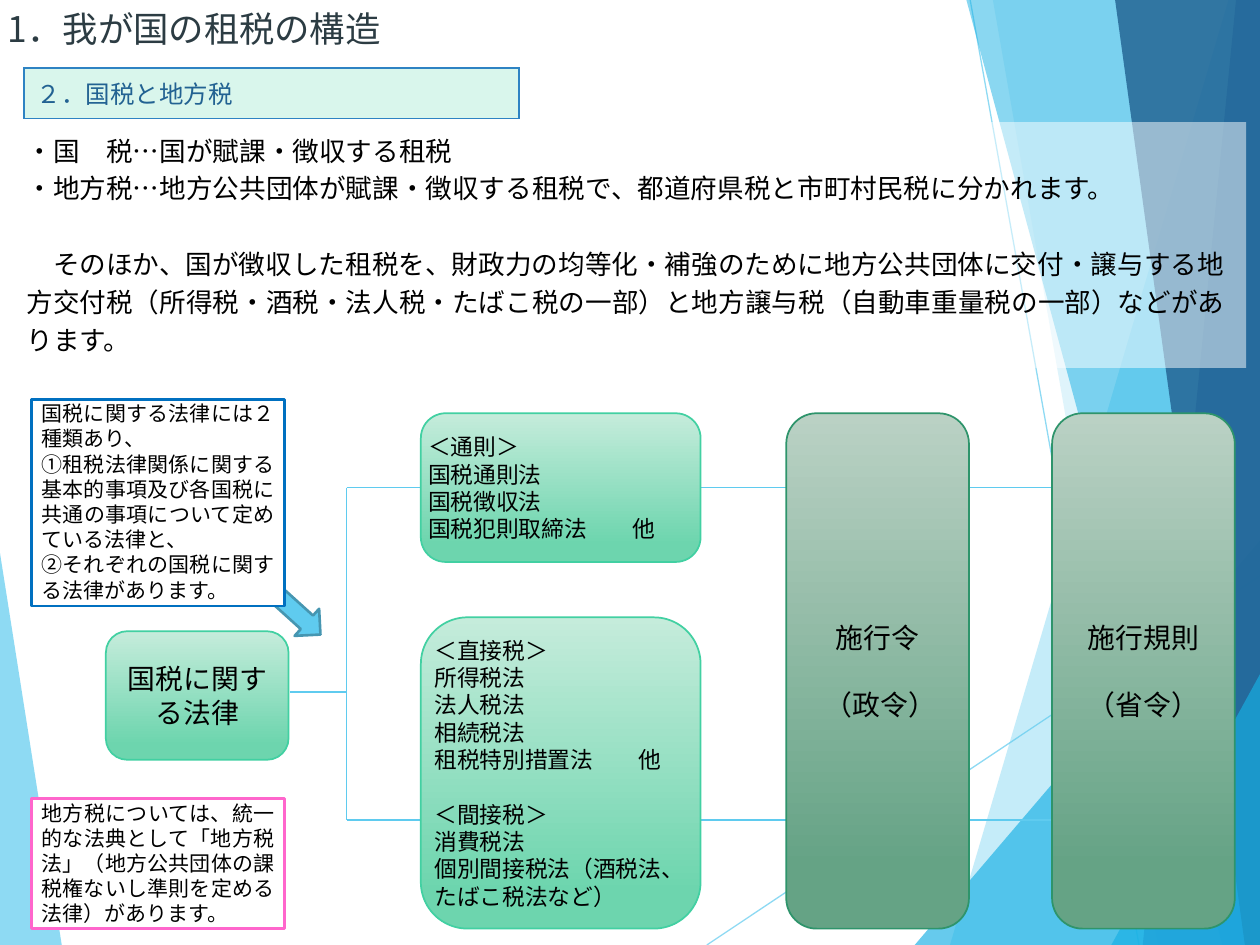
from dataclasses import dataclass

from lxml import etree
from pptx import Presentation
from pptx.dml.color import RGBColor
from pptx.enum.shapes import MSO_CONNECTOR, MSO_SHAPE
from pptx.enum.text import MSO_ANCHOR, MSO_AUTO_SIZE, PP_ALIGN
from pptx.oxml.ns import qn
from pptx.util import Inches, Pt

STRAIGHT = MSO_CONNECTOR.STRAIGHT
RECTANGLE, ROUNDED, RIGHT_ARROW = MSO_SHAPE.RECTANGLE, MSO_SHAPE.ROUNDED_RECTANGLE, MSO_SHAPE.RIGHT_ARROW
TOP, MIDDLE = MSO_ANCHOR.TOP, MSO_ANCHOR.MIDDLE
LEFT, CENTER, JUSTIFY = PP_ALIGN.LEFT, PP_ALIGN.CENTER, PP_ALIGN.JUSTIFY
NO_AUTOSIZE = MSO_AUTO_SIZE.NONE


@dataclass(frozen=True)
class Theme:
    """Colours, type sizes and font of the deck."""
    font: str = "Noto Sans CJK JP"
    title_size: float = 20.2
    node_size: float = 15.9
    body_size: float = 15.2
    label_size: float = 14
    list_size: float = 13
    note_size: float = 12
    ink: str = "000000"
    paper: str = "FFFFFF"
    title: str = "2C3C43"
    navy: str = "226292"
    blue: str = "2E83C3"
    azure: str = "17B0E4"
    sky: str = "5FCBEF"
    arrow_edge: str = "4696B1"
    label_fill: str = "D9F6EC"
    law: tuple = ("C5ECDB", "6DD5AE", "42D0A2")
    decree: tuple = ("BAD1C4", "65A385", "2E946B")
    national: str = "0070C0"
    local: str = "FF66CC"


@dataclass(frozen=True)
class Box:
    """A rectangle measured in inches."""
    left: float
    top: float
    width: float
    height: float

    def inner(self, left, top, width, height):
        """Return a box placed relative to this one."""
        return Box(self.left + left, self.top + top, width, height)

    def lengths(self):
        """Return left, top, width and height as lengths."""
        return [Inches(side) for side in (self.left, self.top, self.width, self.height)]


THEME = Theme()


def rgb(value):
    """Turn a hex string into a colour."""
    return RGBColor.from_string(value)


def set_opacity(shape, percent):
    """Make every colour of a shape partly transparent."""
    for color in shape.element.spPr.iter(qn("a:srgbClr")):
        etree.SubElement(color, qn("a:alpha"), val=str(percent * 1000))


def write(frame, lines, size, color=THEME.ink, align=LEFT, anchor=MIDDLE, insets=(0, 0.05)):
    """Fill a text frame with formatted paragraphs."""
    frame.text = "\n".join(lines)
    frame.word_wrap = True
    frame.auto_size = NO_AUTOSIZE
    frame.vertical_anchor = anchor
    frame.margin_left = frame.margin_right = Inches(insets[0])
    frame.margin_top = frame.margin_bottom = Inches(insets[1])
    for para in frame.paragraphs:
        para.alignment = align
        style(para, size, color)


def style(para, size, color):
    """Set size, colour and both script fonts on the runs of a paragraph."""
    for span in para.runs:
        span.font.size = Pt(size)
        span.font.color.rgb = rgb(color)
        span.font.name = THEME.font
        etree.SubElement(span.font._element, qn("a:ea"), typeface=THEME.font)


def add_block(page, kind, box, fill, edge, width):
    """Add a flat shape with a solid fill and an outline."""
    block = page.shapes.add_shape(kind, *box.lengths())
    block.shadow.inherit = False
    block.fill.solid()
    block.fill.fore_color.rgb = rgb(fill)
    block.line.color.rgb = rgb(edge)
    block.line.width = Pt(width)
    return block


def add_line(page, box, start, end, width=1):
    """Add a sky-blue connector between two points of a box."""
    points = [Inches(value) for x, y in (start, end) for value in (box.left + x, box.top + y)]
    line = page.shapes.add_connector(STRAIGHT, *points)
    line.line.color.rgb = rgb(THEME.sky)
    line.line.width = Pt(width)
    etree.SubElement(line.element.spPr, qn("a:effectLst"))
    return line


def add_facet(page, box, points, color, opacity):
    """Add one translucent polygon of the backdrop."""
    corners = [(Inches(box.left + x), Inches(box.top + y)) for x, y in points]
    builder = page.shapes.build_freeform(*corners[0])
    builder.add_line_segments(corners[1:])
    facet = builder.convert_to_shape()
    facet.shadow.inherit = False
    facet.fill.solid()
    facet.fill.fore_color.rgb = rgb(color)
    facet.line.fill.background()
    set_opacity(facet, opacity)


def add_backdrop(page, box):
    """Draw the facets and thin rays behind the content."""
    right, bottom = box.width, box.height
    add_facet(page, box, [(0, 4.39), (0.49, bottom), (0, bottom)], THEME.sky, 70)
    for start, end in (((5.61, bottom), (right, 4.57)), ((7.7, 0), (9.04, bottom))):
        set_opacity(add_line(page, box, start, end, 0.75), 70)
    facets = [
        (9.75, 0, 7.54, THEME.sky, 36),
        (7.88, 0, 9.19, THEME.sky, 20),
        (right, 4.29, 7.26, THEME.azure, 66),
        (7.67, 0, 9.7, THEME.azure, 50),
        (9.81, 0, 9.07, THEME.blue, 70),
        (8.85, 0, 9.88, THEME.navy, 82),
        (right, 5.35, 8.82, THEME.azure, 66),
    ]
    for upper, top, lower, color, opacity in facets:
        points = [(upper, top), (lower, bottom), (right, bottom), (right, top)]
        add_facet(page, box, points, color, opacity)


def place(holder, box):
    """Move a placeholder into a box and in front of earlier shapes."""
    holder.left, holder.top, holder.width, holder.height = box.lengths()
    holder.element.getparent().append(holder.element)


def add_title(page, box):
    """Set the slide title."""
    title = page.shapes.title
    place(title, box)
    write(title.text_frame, [" 1．我が国の租税の構造"], THEME.title_size, THEME.title, insets=(0, 0))


def add_explanation(page, box):
    """Set the body text on its translucent panel."""
    body = page.placeholders[1]
    place(body, box)
    body.fill.solid()
    body.fill.fore_color.rgb = rgb(THEME.paper)
    set_opacity(body, 50)
    write(body.text_frame, [
        "・国　税…国が賦課・徴収する租税",
        "・地方税…地方公共団体が賦課・徴収する租税で、都道府県税と市町村民税に分かれます。",
        "　そのほか、国が徴収した租税を、財政力の均等化・補強のために地方公共団体に交付・譲与する地方交付税（所得税・酒税・法人税・たばこ税の一部）と地方譲与税（自動車重量税の一部）などがあります。",
    ], THEME.body_size, anchor=TOP, insets=(0.1, 0.05))
    for para in body.text_frame.paragraphs:
        para.line_spacing = Pt(21.6)
        para.space_before = Pt(0)
        properties = para._p.get_or_add_pPr()
        properties.set("marL", "0")
        properties.set("indent", "0")
        etree.SubElement(properties, qn("a:buNone"))
    para.space_before = Pt(21.6)


def add_section_label(page, box):
    """Add the one-cell table that names the section."""
    table = page.shapes.add_table(1, 1, *box.lengths()).table
    cell = table.cell(0, 0)
    cell.text = "２．国税と地方税"
    cell.vertical_anchor = MIDDLE
    cell.fill.solid()
    cell.fill.fore_color.rgb = rgb(THEME.label_fill)
    para = cell.text_frame.paragraphs[0]
    style(para, THEME.label_size, THEME.navy)
    para.runs[0].font.bold = False
    properties = cell._tc.get_or_add_tcPr()
    for index, side in enumerate(("a:lnL", "a:lnR", "a:lnT", "a:lnB")):
        border = etree.Element(qn(side), w=str(Pt(1)))
        fill = etree.SubElement(border, qn("a:solidFill"))
        etree.SubElement(fill, qn("a:srgbClr"), val=THEME.blue)
        properties.insert(index, border)


def add_node(page, box, lines, colors, size, align=LEFT, side_inset=0, gap_before=None, gap=0):
    """Add a rounded gradient node, with a gap before one paragraph."""
    node = add_block(page, ROUNDED, box, colors[0], colors[2], 1)
    node.fill.gradient()
    node.fill.gradient_angle = 270
    for stop, color, position in zip(node.fill.gradient_stops, colors, (0, 0.88)):
        stop.color.rgb = rgb(color)
        stop.position = position
    write(node.text_frame, lines, size, align=align, insets=(side_inset, 0.05))
    if gap_before is not None:
        node.text_frame.paragraphs[gap_before].space_before = Pt(gap)


def add_law_diagram(page, box):
    """Draw the tree from tax laws to orders and regulations."""
    trunk, upper, lower, regulation = 1.91, 0.59, 3.23, 7.51
    add_line(page, box, (1.46, 2.21), (trunk, 2.21))
    add_line(page, box, (trunk, upper), (trunk, lower))
    for level in (upper, lower):
        add_line(page, box, (trunk, level), (regulation, level))
    for left, lines in ((regulation, ["施行規則", "（省令）"]), (5.4, ["施行令", " （政令）"])):
        add_node(page, box.inner(left, 0, 1.45, box.height), lines, THEME.decree,
                 THEME.node_size, CENTER, gap_before=1, gap=19)
    add_node(page, box.inner(2.5, 0, 2.22, 1.18),
             ["＜通則＞", "国税通則法", "国税徴収法", "国税犯則取締法　　他"], THEME.law, THEME.list_size)
    add_node(page, box.inner(0, 1.73, 1.45, 1.02), ["国税に関する法律"], THEME.law,
             THEME.node_size, CENTER, side_inset=0.1)
    add_node(page, box.inner(2.5, 1.62, 2.22, 2.47), [
        "＜直接税＞", "所得税法", "法人税法", "相続税法", "租税特別措置法　　他",
        "＜間接税＞", "消費税法", "個別間接税法（酒税法、たばこ税法など）",
    ], THEME.law, THEME.list_size, gap_before=5, gap=15.6)


def add_note(page, box, lines, edge):
    """Add a white note with a coloured outline."""
    note = add_block(page, RECTANGLE, box, THEME.paper, edge, 1.5)
    write(note.text_frame, lines, THEME.note_size, align=JUSTIFY, anchor=TOP, insets=(0.08, 0.01))


def add_notes(page, box):
    """Add the two side notes and the arrow between them."""
    add_note(page, box.inner(0, 3.17, box.width, 1.03),
             ["地方税については、統一的な法典として「地方税法」（地方公共団体の課税権ないし準則を定める法律）があります。"],
             THEME.local)
    arrow = add_block(page, RIGHT_ARROW, box.inner(1.64, 1.47, 0.75, 0.29), THEME.sky, THEME.arrow_edge, 1.5)
    arrow.rotation = 42.1
    add_note(page, box.inner(0, 0, box.width, 1.64), [
        "国税に関する法律には２種類あり、",
        "①租税法律関係に関する基本的事項及び各国税に共通の事項について定めている法律と、",
        "②それぞれの国税に関する法律があります。",
    ], THEME.national)


def main():
    """Build the deck and save it."""
    deck = Presentation()
    deck.slide_width, deck.slide_height = Inches(10), Inches(7.5)
    page = deck.slides.add_slide(deck.slide_layouts[1])
    add_backdrop(page, Box(0, 0, 10, 7.5))
    add_explanation(page, Box(0.11, 0.97, 9.78, 1.95))
    add_law_diagram(page, Box(0.84, 3.28, 8.96, 4.09))
    add_notes(page, Box(0.25, 3.17, 2.01, 4.2))
    add_title(page, Box(0, 0, 4, 0.45))
    add_section_label(page, Box(0.19, 0.54, 3.93, 0.4))
    deck.save("out.pptx")


if __name__ == "__main__":
    main()
